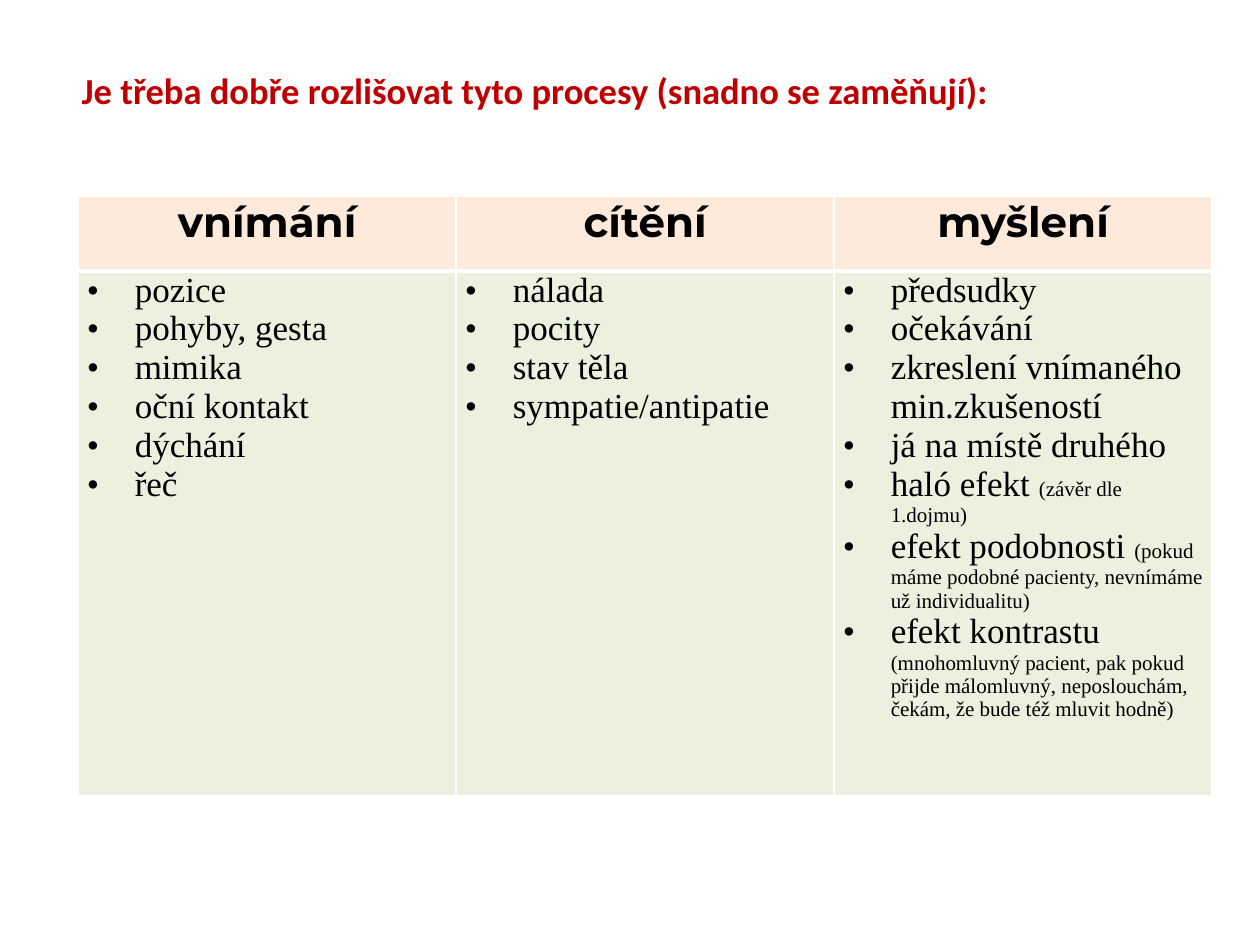
"""Build a slide with a table that compares perceiving, feeling and thinking."""
import pptx
import pptx.util
import pptx.dml.color
import pptx.enum.text
import pptx.oxml
import pptx.oxml.ns

Inches = pptx.util.Inches
Pt = pptx.util.Pt
Align = pptx.enum.text.PP_ALIGN
NS = pptx.oxml.ns.nsdecls("a")


def color(code):
    return pptx.dml.color.RGBColor.from_string(code)


def write(para, text, size=20, font="Times New Roman", bold=False, fill="000000", align=Align.LEFT):
    para.alignment = align
    run = para.add_run()
    run.text = text
    run.font.size = Pt(size)
    run.font.name = font
    run.font.bold = bold
    run.font.color.rgb = color(fill)


columns = [
    ("vnímání", [
        ("pozice",), ("pohyby, gesta",), ("mimika",),
        ("oční kontakt",), ("dýchání",), ("řeč",),
    ]),
    ("cítění", [
        ("nálada",), ("pocity",), ("stav těla",), ("sympatie/antipatie",),
    ]),
    ("myšlení", [
        ("předsudky",),
        ("očekávání",),
        ("zkreslení vnímaného min.zkušeností",),
        ("já na místě druhého",),
        ("haló efekt ", "(závěr dle 1.dojmu)"),
        ("efekt podobnosti ", "(pokud máme podobné pacienty, nevnímáme už individualitu)"),
        ("efekt kontrastu ", "(mnohomluvný pacient, pak pokud přijde málomluvný, "
                             "neposlouchám, čekám, že bude též mluvit hodně)"),
    ]),
]

deck = pptx.Presentation()
deck.slide_width = Inches(10)
deck.slide_height = Inches(7.5)
slide = deck.slides.add_slide(deck.slide_layouts[6])

frame = slide.shapes.add_table(2, 3, Inches(0.62), Inches(1.56), Inches(9), Inches(4.76))
table = frame.table
table.rows[0].height = Inches(0.59)
table.rows[1].height = Inches(4.17)

for col, (head, items) in enumerate(columns):
    table.columns[col].width = Inches(3)
    for row, back in enumerate(["FDEADA", "EBF1DE"]):
        cell = table.cell(row, col)
        cell.margin_left = cell.margin_right = Inches(0.07)
        cell.margin_top = cell.margin_bottom = 0
        props = cell._tc.get_or_add_tcPr()
        widths = {"L": 1, "R": 1, "T": 3 if row == 1 else 1, "B": 3 if row == 0 else 1}
        for side, width in widths.items():
            props.append(pptx.oxml.parse_xml(
                f'<a:ln{side} {NS} w="{Pt(width)}"><a:solidFill>'
                f'<a:srgbClr val="FFFFFF"/></a:solidFill></a:ln{side}>'))
        cell.fill.solid()
        cell.fill.fore_color.rgb = color(back)

    write(table.cell(0, col).text_frame.paragraphs[0], head,
          size=24, font="Montserrat", bold=True, align=Align.CENTER)

    body = table.cell(1, col).text_frame
    for index, parts in enumerate(items):
        para = body.add_paragraph() if index else body.paragraphs[0]
        props = para._p.get_or_add_pPr()
        props.set("marL", str(Inches(0.38)))
        props.set("indent", str(-Inches(0.38)))
        props.append(pptx.oxml.parse_xml(f'<a:buFont {NS} typeface="Times New Roman"/>'))
        props.append(pptx.oxml.parse_xml(f'<a:buChar {NS} char="•"/>'))
        props.append(pptx.oxml.parse_xml(
            f'<a:tabLst {NS}><a:tab pos="{Inches(0.25)}" algn="l"/></a:tabLst>'))
        for part, size in zip(parts, [20, 12]):
            write(para, part, size=size)

title = slide.shapes.add_textbox(Inches(0.55), Inches(0.55), Inches(9), Inches(0.39)).text_frame
title.word_wrap = True
title.vertical_anchor = pptx.enum.text.MSO_ANCHOR.MIDDLE
title.paragraphs[0].line_spacing = 0.8
write(title.paragraphs[0], "Je třeba dobře rozlišovat tyto procesy (snadno se zaměňují):",
      size=20.9, font="Calibri", bold=True, fill="C00000")

deck.save("out.pptx")
